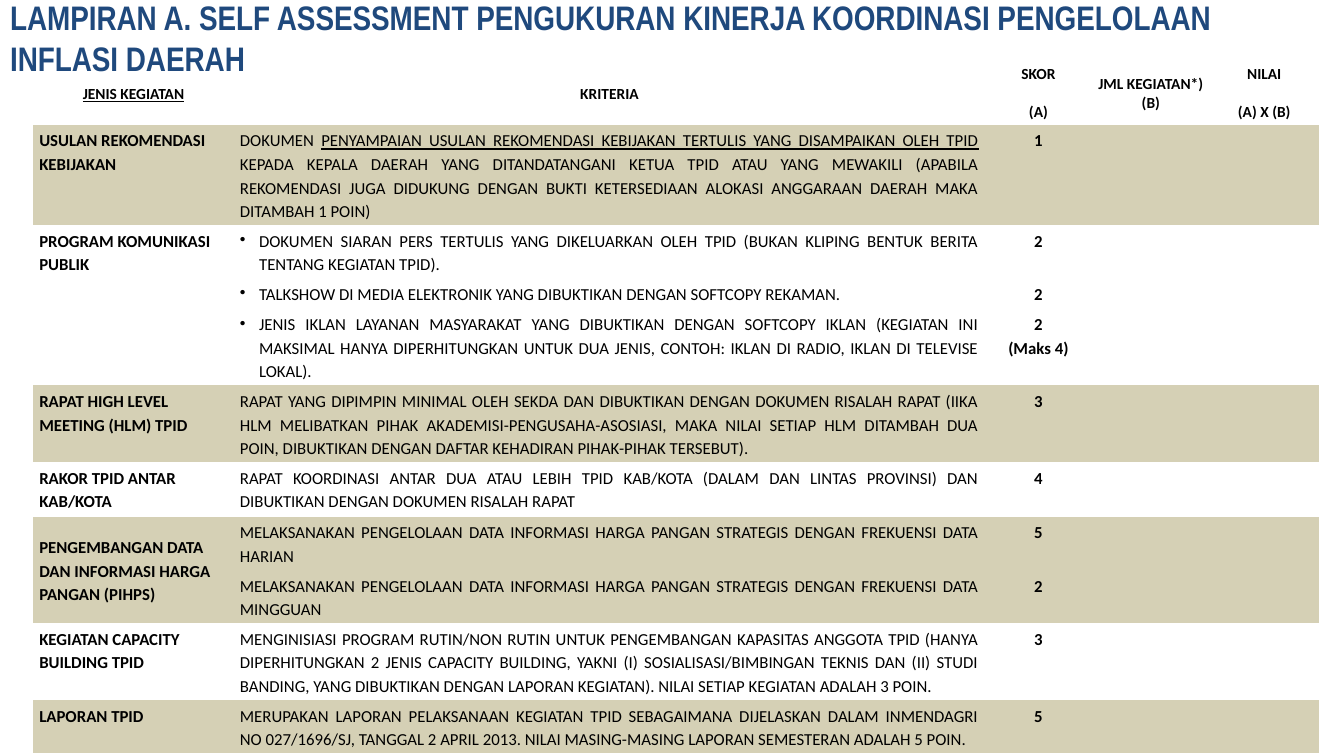
"""Build the TPID self assessment slide with its scoring table."""
from lxml.etree import SubElement
from pptx import Presentation
from pptx.dml.color import RGBColor
from pptx.enum.text import MSO_ANCHOR as Anchor, PP_ALIGN as Align
from pptx.oxml.ns import qn
from pptx.util import Inches, Pt

NAVY = RGBColor(0x1F, 0x49, 0x7D)
BLACK = RGBColor(0, 0, 0)
SAND = RGBColor(0xD5, 0xD0, 0xB5)
PLAIN = "{2D5ABB26-0587-4C30-8999-92F81FD0307C}"

WIDTHS = [1.99, 7.45, 1.06, 1.17, 1.08]
HEIGHTS = [0.63, 0.99, 0.53, 0.3, 0.76, 0.76, 0.54, 0.53, 0.53, 0.76, 0.53]
HEADS = [["JENIS KEGIATAN"], ["KRITERIA"], ["SKOR", "(A)"],
         ["JML KEGIATAN*)", "(B)"], ["NILAI", "(A) X (B)"]]
GROUPS = [
    ("USULAN REKOMENDASI KEBIJAKAN", [
        (["DOKUMEN ",
          "PENYAMPAIAN USULAN REKOMENDASI KEBIJAKAN TERTULIS YANG DISAMPAIKAN OLEH TPID",
          " KEPADA KEPALA DAERAH YANG DITANDATANGANI KETUA TPID ATAU YANG MEWAKILI "
          "(APABILA REKOMENDASI JUGA DIDUKUNG DENGAN BUKTI KETERSEDIAAN ALOKASI "
          "ANGGARAAN DAERAH MAKA DITAMBAH 1 POIN)"], ["1"])]),
    ("PROGRAM KOMUNIKASI PUBLIK", [
        (["DOKUMEN SIARAN PERS TERTULIS YANG DIKELUARKAN OLEH TPID (BUKAN KLIPING "
          "BENTUK BERITA TENTANG KEGIATAN TPID)."], ["2"]),
        (["TALKSHOW DI MEDIA ELEKTRONIK YANG DIBUKTIKAN DENGAN SOFTCOPY REKAMAN."], ["2"]),
        (["JENIS IKLAN LAYANAN MASYARAKAT YANG DIBUKTIKAN DENGAN SOFTCOPY IKLAN "
          "(KEGIATAN INI MAKSIMAL HANYA DIPERHITUNGKAN UNTUK DUA JENIS, CONTOH: "
          "IKLAN DI RADIO, IKLAN DI TELEVISE LOKAL)."], ["2", "(Maks 4)"])]),
    ("RAPAT HIGH LEVEL MEETING (HLM) TPID", [
        (["RAPAT YANG DIPIMPIN MINIMAL OLEH SEKDA DAN DIBUKTIKAN DENGAN DOKUMEN "
          "RISALAH RAPAT (IIKA HLM MELIBATKAN PIHAK AKADEMISI-PENGUSAHA-ASOSIASI, "
          "MAKA NILAI SETIAP HLM DITAMBAH DUA POIN, DIBUKTIKAN DENGAN DAFTAR "
          "KEHADIRAN PIHAK-PIHAK TERSEBUT)."], ["3"])]),
    ("RAKOR TPID ANTAR KAB/KOTA", [
        (["RAPAT KOORDINASI ANTAR DUA ATAU LEBIH TPID KAB/KOTA (DALAM DAN LINTAS "
          "PROVINSI) DAN DIBUKTIKAN DENGAN DOKUMEN RISALAH RAPAT"], ["4"])]),
    ("PENGEMBANGAN DATA DAN INFORMASI HARGA PANGAN (PIHPS)", [
        (["MELAKSANAKAN PENGELOLAAN DATA INFORMASI HARGA PANGAN STRATEGIS DENGAN "
          "FREKUENSI DATA HARIAN"], ["5"]),
        (["MELAKSANAKAN PENGELOLAAN DATA INFORMASI HARGA PANGAN STRATEGIS DENGAN "
          "FREKUENSI DATA MINGGUAN"], ["2"])]),
    ("KEGIATAN CAPACITY BUILDING TPID", [
        (["MENGINISIASI PROGRAM RUTIN/NON RUTIN UNTUK PENGEMBANGAN KAPASITAS ANGGOTA "
          "TPID (HANYA DIPERHITUNGKAN 2 JENIS CAPACITY BUILDING, YAKNI (I) "
          "SOSIALISASI/BIMBINGAN TEKNIS DAN (II) STUDI BANDING, YANG DIBUKTIKAN "
          "DENGAN LAPORAN KEGIATAN). NILAI SETIAP KEGIATAN ADALAH 3 POIN."], ["3"])]),
    ("LAPORAN TPID", [
        (["MERUPAKAN LAPORAN PELAKSANAAN KEGIATAN TPID SEBAGAIMANA DIJELASKAN DALAM "
          "INMENDAGRI NO 027/1696/SJ, TANGGAL 2 APRIL 2013. NILAI MASING-MASING "
          "LAPORAN SEMESTERAN ADALAH 5 POIN."], ["5"])]),
]


def style(para, size, bold, align, space=1.15):
    para.alignment = align
    para.line_spacing = space
    font = para.font
    font.name, font.size, font.bold = "Calibri", Pt(size), bold
    font.color.rgb = BLACK


def write(cell, lines, size, align, space=1.15):
    cell.text = "\n".join(lines)
    for para in cell.text_frame.paragraphs:
        style(para, size, True, align, space)


deck = Presentation()
deck.slide_width, deck.slide_height = Inches(13.33), Inches(7.5)
slide = deck.slides.add_slide(deck.slide_layouts[5])

title = slide.shapes.title
title.left, title.top = Inches(0), Inches(0)
title.width, title.height = Inches(12.45), Inches(0.75)
title.text = "LAMPIRAN A. SELF ASSESSMENT PENGUKURAN KINERJA KOORDINASI PENGELOLAAN INFLASI DAERAH"
title.text_frame.vertical_anchor = Anchor.MIDDLE
head = title.text_frame.paragraphs[0]
head.alignment = Align.LEFT
head.font.name, head.font.size, head.font.bold = "Arial Narrow", Pt(24.3), True
head.font.color.rgb = NAVY

table = slide.shapes.add_table(
    len(HEIGHTS), len(WIDTHS), Inches(0.33), Inches(0.61),
    Inches(sum(WIDTHS)), Inches(sum(HEIGHTS))).table
table.first_row = table.horz_banding = False
table._tbl.tblPr.find(qn("a:tableStyleId")).text = PLAIN
for col, width in zip(table.columns, WIDTHS):
    col.width = Inches(width)
for row, height in zip(table.rows, HEIGHTS):
    row.height = Inches(height)
for cell in table.iter_cells():
    cell.margin_left = cell.margin_right = Inches(0.06)
    cell.margin_top = cell.margin_bottom = Inches(0.03)
    cell.fill.background()

for col, lines in enumerate(HEADS):
    cell = table.cell(0, col)
    cell.vertical_anchor = Anchor.MIDDLE
    write(cell, lines, 11, Align.CENTER, 1.15 if col < 2 else 1.0)
    if col in (2, 4):
        cell.text_frame.paragraphs[1].space_before = Pt(13.4)
table.cell(0, 0).text_frame.paragraphs[0].font.underline = True

top = 1
for index, (name, items) in enumerate(GROUPS):
    label = table.cell(top, 0)
    if len(items) > 1:
        label.merge(table.cell(top + len(items) - 1, 0))
    write(label, [name], 12, Align.LEFT)
    if len(items) == 2:
        label.vertical_anchor = Anchor.MIDDLE
    for row, (parts, score) in enumerate(items, top):
        para = table.cell(row, 1).text_frame.paragraphs[0]
        if len(items) == 3:
            props = para._p.get_or_add_pPr()
            props.set("marL", str(Inches(0.19)))
            props.set("indent", str(-Inches(0.19)))
            SubElement(props, qn("a:buChar")).set("char", "•")
        style(para, 12, False, Align.JUSTIFY)
        for spot, part in enumerate(parts):
            run = para.add_run()
            run.text = part
            if spot == 1:
                run.font.underline = True
        write(table.cell(row, 2), score, 12, Align.CENTER)
        if index % 2 == 0:
            for col in range(len(WIDTHS)):
                cell = table.cell(row, col)
                cell.fill.solid()
                cell.fill.fore_color.rgb = SAND
    top += len(items)

for cell in table.iter_cells():
    if not cell.text:
        SubElement(cell.text_frame.paragraphs[0]._p, qn("a:endParaRPr")).set("sz", "1200")

deck.save("out.pptx")
